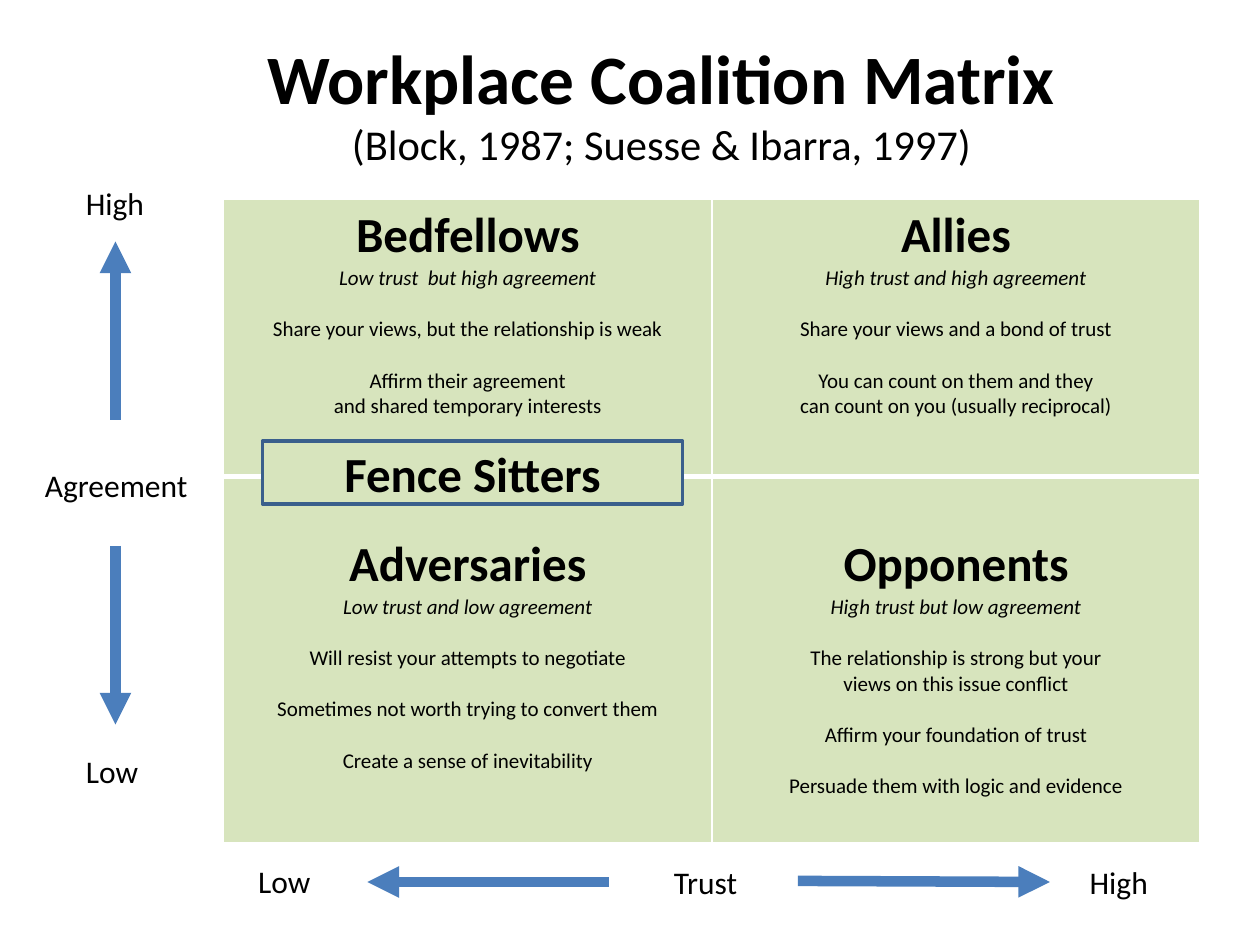
import dataclasses

import lxml.etree
import pptx
import pptx.dml.color
import pptx.enum.shapes
import pptx.enum.text
import pptx.oxml.ns
import pptx.util

BLACK = pptx.dml.color.RGBColor(0x00, 0x00, 0x00)
WHITE = pptx.dml.color.RGBColor(0xFF, 0xFF, 0xFF)
GREEN = pptx.dml.color.RGBColor(0xD7, 0xE4, 0xBD)
BLUE = pptx.dml.color.RGBColor(0x4B, 0x7E, 0xBC)
NAVY = pptx.dml.color.RGBColor(0x3A, 0x5F, 0x8C)

FONT = "Calibri"
HEAD, BODY, LABEL = 28, 12, 18
GAP = 14.65  # one empty body line, in points
COLS, ROWS = 120, 90  # grid of the slide
CENTER = pptx.enum.text.PP_ALIGN.CENTER
MIDDLE = pptx.enum.text.MSO_ANCHOR.MIDDLE
qn = pptx.oxml.ns.qn


@dataclasses.dataclass
class Box:
    left: float
    top: float
    width: float
    height: float


@dataclasses.dataclass
class Arrow:
    x1: float
    y1: float
    x2: float
    y2: float


@dataclasses.dataclass
class Label:
    text: str
    left: float
    top: float
    width: float = 11


@dataclasses.dataclass
class Group:
    name: str
    stance: str
    points: list[str]  # each point may hold several lines
    drop: float = 0.05  # inches above the name


MATRIX = [
    [
        Group("Bedfellows", "Low trust  but high agreement", [
            "Share your views, but the relationship is weak",
            "Affirm their agreement\nand shared temporary interests"]),
        Group("Allies", "High trust and high agreement", [
            "Share your views and a bond of trust",
            "You can count on them and they\ncan count on you (usually reciprocal)"]),
    ],
    [
        Group("Adversaries", "Low trust and low agreement", [
            "Will resist your attempts to negotiate",
            "Sometimes not worth trying to convert them",
            "Create a sense of inevitability"], 0.46),
        Group("Opponents", "High trust but low agreement", [
            "The relationship is strong but your\nviews on this issue conflict",
            "Affirm your foundation of trust",
            "Persuade them with logic and evidence"], 0.46),
    ],
]
TABLE = Box(21.3, 19, 93, 61.3)
HEIGHTS = [26.4, 34.9]
ARROWS = [
    Arrow(11, 40, 11, 23),
    Arrow(11, 52, 11, 69),
    Arrow(58, 84, 35, 84),
    Arrow(76, 83.9, 100, 84),
]
LABELS = [
    Label("High", 7, 16.9),
    Label("Agreement", 3.1, 43.8, 16.3),
    Label("Low", 7, 71),
    Label("Low", 23.4, 81.5),
    Label("Trust", 63, 81.6),
    Label("High", 102.6, 81.6),
]

deck = pptx.Presentation()
deck.slide_width = pptx.util.Inches(10)
deck.slide_height = pptx.util.Inches(7.5)
slide = deck.slides.add_slide(deck.slide_layouts[6])


def across(cols: float) -> int:
    return round(deck.slide_width * cols / COLS)


def down(rows: float) -> int:
    return round(deck.slide_height * rows / ROWS)


def place(box: Box) -> tuple[int, int, int, int]:
    return across(box.left), down(box.top), across(box.width), down(box.height)


def style(run, size: float, bold: bool = False, slant: bool = False) -> None:
    font = run.font
    font.name, font.size = FONT, pptx.util.Pt(size)
    font.bold, font.italic = bold, slant
    font.color.rgb = BLACK


def edge(cell, sides: dict[str, float]) -> None:
    """Give the cell white borders; they come before its fill."""
    props = cell._tc.get_or_add_tcPr()
    for spot, (side, width) in enumerate(sides.items()):
        line = lxml.etree.Element(qn(f"a:ln{side}"), w=str(pptx.util.Pt(width)))
        fill = lxml.etree.SubElement(line, qn("a:solidFill"))
        lxml.etree.SubElement(fill, qn("a:srgbClr"), val=str(WHITE))
        props.insert(spot, line)


def fill_cell(cell, group: Group, sides: dict[str, float]) -> None:
    cell.fill.solid()
    cell.fill.fore_color.rgb = GREEN
    cell.margin_top = pptx.util.Inches(group.drop)
    edge(cell, sides)
    lines = [group.name, group.stance]
    starts = set()
    for point in group.points:
        starts.add(len(lines))
        lines += point.split("\n")
    cell.text_frame.text = "\n".join(lines)
    for spot, para in enumerate(cell.text_frame.paragraphs):
        para.alignment = CENTER
        para.space_before = pptx.util.Pt(GAP if spot in starts else 0)
        style(para.runs[0], BODY if spot else HEAD, spot == 0, spot == 1)


def draw_table() -> None:
    table = slide.shapes.add_table(2, 2, *place(TABLE)).table
    table.first_row = table.horz_banding = False
    for col in table.columns:
        col.width = across(TABLE.width / 2)
    for row, groups in enumerate(MATRIX):
        table.rows[row].height = down(HEIGHTS[row])
        sides = {"L": 1, "R": 1, "T": 1 if row == 0 else 3, "B": 3 if row == 0 else 1}
        for col, group in enumerate(groups):
            fill_cell(table.cell(row, col), group, sides)


def draw_arrow(arrow: Arrow) -> None:
    line = slide.shapes.add_connector(
        pptx.enum.shapes.MSO_CONNECTOR.STRAIGHT,
        across(arrow.x1), down(arrow.y1), across(arrow.x2), down(arrow.y2))
    line.line.color.rgb = BLUE
    line.line.width = pptx.util.Pt(6)
    lxml.etree.SubElement(line.line._get_or_add_ln(), qn("a:tailEnd"), type="triangle")
    lxml.etree.SubElement(line._element.spPr, qn("a:effectLst"))


def draw_label(label: Label) -> None:
    box = Box(label.left, label.top, label.width, 4.8)
    frame = slide.shapes.add_textbox(*place(box)).text_frame
    frame.word_wrap = True
    frame.text = label.text
    style(frame.paragraphs[0].runs[0], LABEL)


def draw_title() -> None:
    frame = slide.shapes.add_textbox(*place(Box(9, 6.5, 108, 6.4))).text_frame
    frame.word_wrap = True
    frame.vertical_anchor = MIDDLE
    para = frame.paragraphs[0]
    para.text = "Workplace Coalition Matrix\n(Block, 1987; Suesse & Ibarra, 1997)"
    para.alignment = CENTER
    style(para.runs[0], 39.6, bold=True)
    style(para.runs[1], 24.3)


def draw_fence() -> None:
    box = slide.shapes.add_shape(
        pptx.enum.shapes.MSO_SHAPE.RECTANGLE, *place(Box(25, 42, 40, 6)))
    box.shadow.inherit = False
    box.fill.solid()
    box.fill.fore_color.rgb = GREEN
    box.line.color.rgb = NAVY
    box.line.width = pptx.util.Pt(2)
    frame = box.text_frame
    frame.text = "Fence Sitters"
    frame.vertical_anchor = MIDDLE
    frame.paragraphs[0].alignment = CENTER
    style(frame.paragraphs[0].runs[0], HEAD, bold=True)


def main() -> None:
    draw_title()
    draw_table()
    draw_fence()
    # Axes: agreement upright, trust along the foot
    for arrow in ARROWS:
        draw_arrow(arrow)
    for label in LABELS:
        draw_label(label)
    deck.save("out.pptx")


if __name__ == "__main__":
    main()
